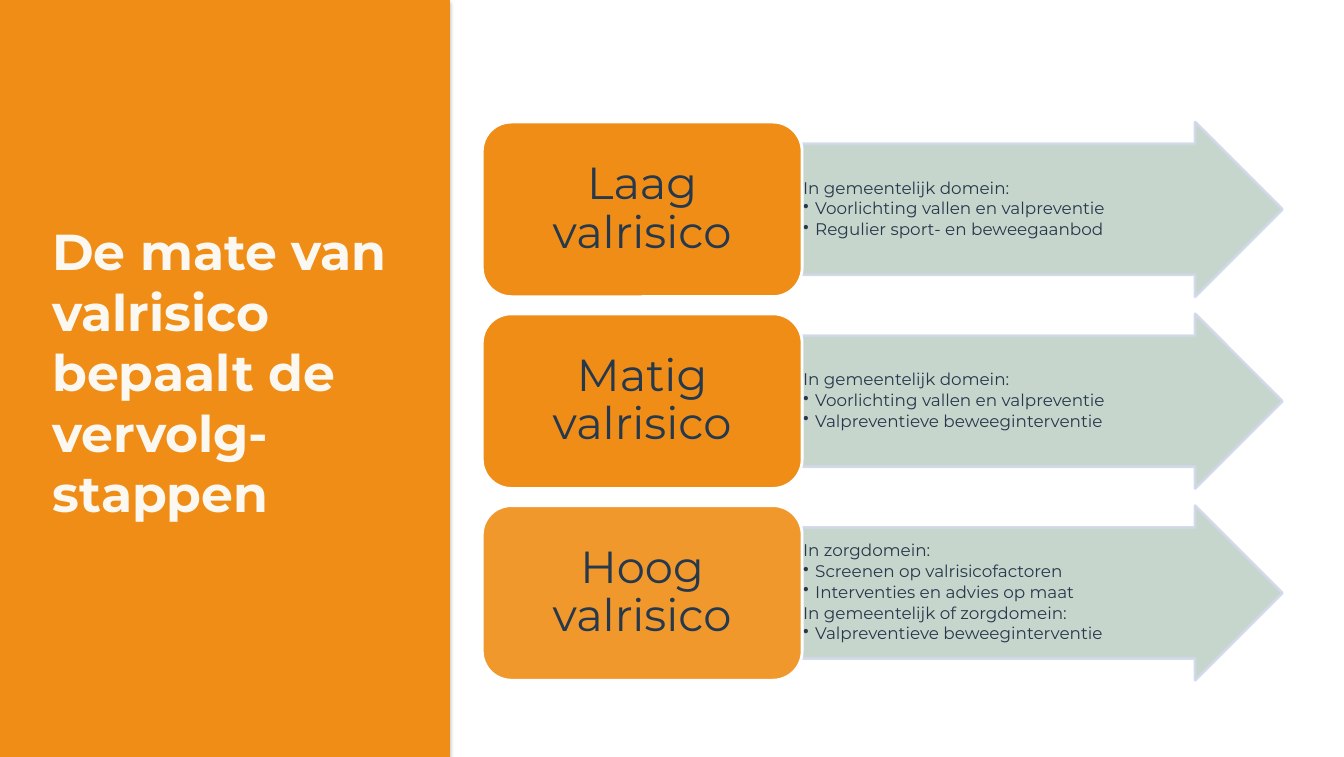
from dataclasses import dataclass

from lxml.etree import SubElement
from pptx import Presentation
from pptx.dml.color import RGBColor
from pptx.enum.shapes import MSO_SHAPE
from pptx.enum.text import MSO_ANCHOR, PP_ALIGN
from pptx.oxml import parse_xml
from pptx.oxml.ns import nsdecls, qn
from pptx.util import Inches, Pt


@dataclass(frozen=True)
class Theme:
    font: str = "Montserrat"
    orange: RGBColor = RGBColor(0xF0, 0x8D, 0x17)
    sage: RGBColor = RGBColor(0xC2, 0xD2, 0xC7)
    arrow_edge: RGBColor = RGBColor(0xD0, 0xD8, 0xE8)
    white: RGBColor = RGBColor(0xFF, 0xFF, 0xFF)
    cream: RGBColor = RGBColor(0xFA, 0xF8, 0xF1)
    navy: RGBColor = RGBColor(0x26, 0x38, 0x4B)
    title_size: Pt = Pt(36)
    level_size: Pt = Pt(32)
    step_size: Pt = Pt(12)
    step_gap: Pt = Pt(1.8)
    edge: Pt = Pt(2)


theme = Theme()


def add_text(paragraph, text, size, color, bold=False):
    run = paragraph.add_run()
    run.text = text
    run.font.name = theme.font
    run.font.size = size
    run.font.bold = bold
    run.font.color.rgb = color


def paint(shape, fill, edge, opaque_parts=()):
    """Fill and outline a shape; the listed formats become 90% opaque."""
    shape.shadow.inherit = False
    shape.fill.solid()
    shape.fill.fore_color.rgb = fill
    shape.line.color.rgb = edge
    shape.line.width = theme.edge
    properties = shape.fill._xPr
    for tag in opaque_parts:
        color = properties.find(f"{tag}/{qn('a:srgbClr')}")
        SubElement(color, qn("a:alpha"), val="90000")


FILL = "."
LINE = qn("a:ln")
SOLID = qn("a:solidFill")

prs = Presentation()
prs.slide_width = Inches(13.32)
prs.slide_height = Inches(7.5)
slide = prs.slides.add_slide(prs.slide_layouts[6])

panel = slide.shapes.add_shape(
    MSO_SHAPE.RECTANGLE, 0, 0, Inches(4.46), prs.slide_height)
paint(panel, theme.orange, theme.orange)
panel.line.fill.background()
effects = panel.fill._xPr.find(qn("a:effectLst"))
effects.append(parse_xml(
    f'<a:outerShdw {nsdecls("a")} blurRad="{Pt(3)}" dist="{Pt(1.8)}" '
    'dir="5400000" rotWithShape="0"><a:srgbClr val="000000">'
    '<a:alpha val="35000"/></a:srgbClr></a:outerShdw>'))

title = slide.shapes.add_textbox(
    Inches(0.42), Inches(1.32), Inches(3.71), Inches(4.72)).text_frame
title.word_wrap = True
title.vertical_anchor = MSO_ANCHOR.MIDDLE
add_text(title.paragraphs[0], "De mate van valrisico bepaalt de vervolg-stappen",
         theme.title_size, theme.cream, bold=True)

# Each step is (text, has bullet)
municipal = ("In gemeentelijk domein:", False)
information = ("Voorlichting vallen en valpreventie", True)
exercise = ("Valpreventieve beweeginterventie", True)
risks = [
    ("Laag valrisico", [
        municipal, information, ("Regulier sport- en beweegaanbod", True)]),
    ("Matig valrisico", [municipal, information, exercise]),
    ("Hoog valrisico", [
        ("In zorgdomein:", False),
        ("Screenen op valrisicofactoren", True),
        ("Interventies en advies op maat", True),
        ("In gemeentelijk of zorgdomein:", False),
        exercise]),
]

row_height = Inches(1.73)
for row, (risk, steps) in enumerate(risks):
    top = Inches(1.21 + 1.9 * row)

    arrow = slide.shapes.add_shape(
        MSO_SHAPE.RIGHT_ARROW, Inches(7.95), top, Inches(4.76), row_height)
    arrow.adjustments[0] = 0.75
    arrow.adjustments[1] = 0.5
    paint(arrow, theme.sage, theme.arrow_edge,
          [SOLID, f"{LINE}/{SOLID}"])
    frame = arrow.text_frame
    frame.word_wrap = True
    frame.vertical_anchor = MSO_ANCHOR.MIDDLE
    frame.margin_left = frame.margin_right = Inches(0.01)
    frame.margin_top = frame.margin_bottom = Inches(0.01)
    for index, (step, bulleted) in enumerate(steps):
        paragraph = frame.add_paragraph() if index else frame.paragraphs[0]
        properties = paragraph._p.get_or_add_pPr()
        properties.set("marL", str(Inches(0.12)))
        properties.set("indent", str(-Inches(0.12)))
        if bulleted:
            SubElement(properties, qn("a:buChar"), char="•")
        else:
            SubElement(properties, qn("a:buNone"))
        paragraph.alignment = PP_ALIGN.LEFT
        paragraph.line_spacing = 0.9
        paragraph.space_after = theme.step_gap
        add_text(paragraph, step, theme.step_size, theme.navy)

    level = slide.shapes.add_shape(
        MSO_SHAPE.ROUNDED_RECTANGLE, Inches(4.78), top, Inches(3.17), row_height)
    is_last = row == len(risks) - 1
    paint(level, theme.orange, theme.white, [SOLID] if is_last else [])
    frame = level.text_frame
    frame.word_wrap = True
    frame.vertical_anchor = MSO_ANCHOR.MIDDLE
    frame.margin_left = frame.margin_right = Inches(0.13)
    frame.margin_top = frame.margin_bottom = Inches(0.07)
    paragraph = frame.paragraphs[0]
    paragraph.alignment = PP_ALIGN.CENTER
    paragraph.line_spacing = 0.9
    add_text(paragraph, risk, theme.level_size, theme.navy)

prs.save("out.pptx")
